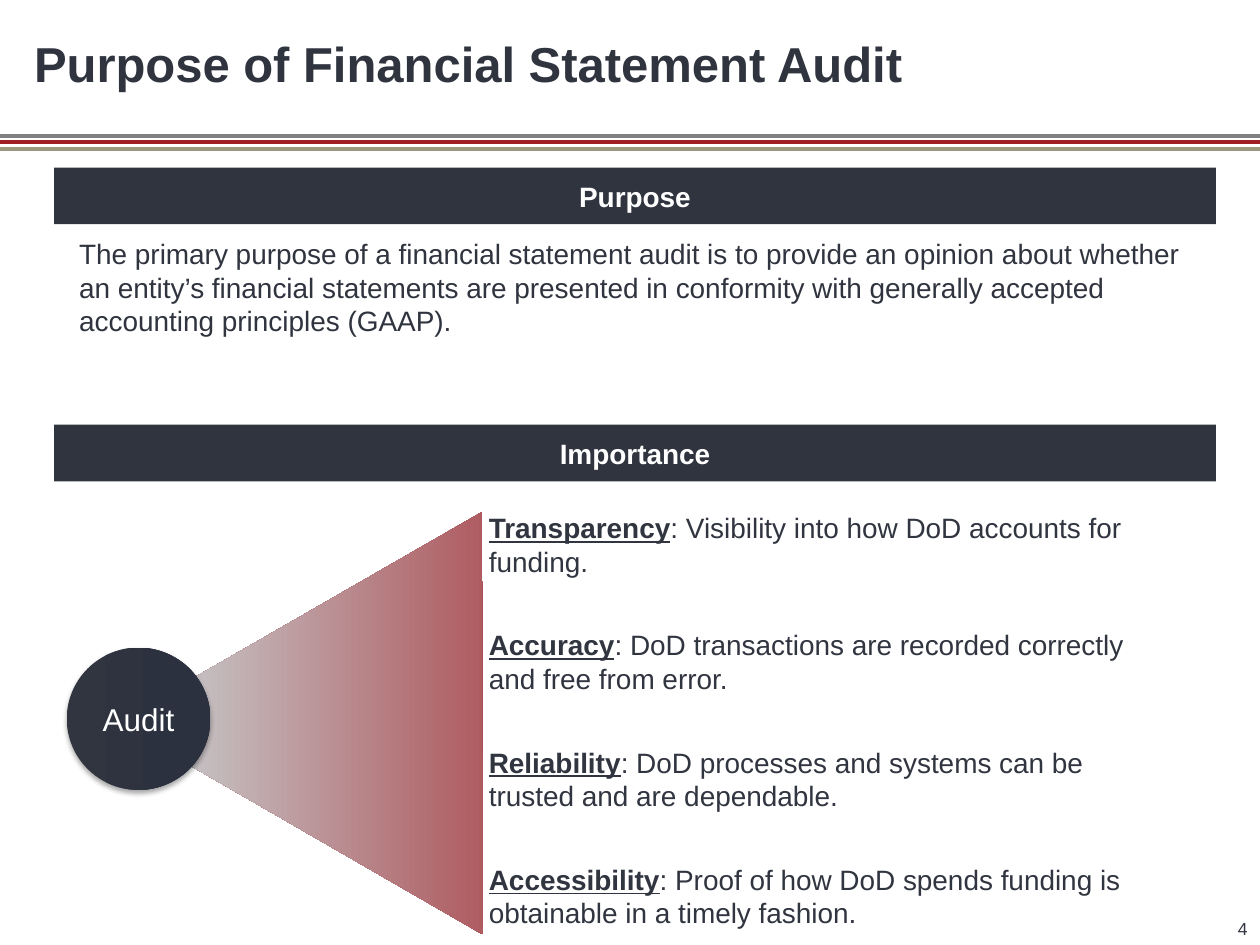
import pptx
import pptx.util
import pptx.enum.shapes
import pptx.enum.text
import pptx.dml.color
import pptx.oxml
import pptx.oxml.ns

Inches, Pt = pptx.util.Inches, pptx.util.Pt
MSO = pptx.enum.shapes.MSO_SHAPE
ALIGN = pptx.enum.text.PP_ALIGN
ANCHOR = pptx.enum.text.MSO_ANCHOR
COLORS = {"navy": "30343F", "ink": "313540", "white": "FFFFFF", "gray": "808080",
          "red": "A11D24", "tan": "9A977C"}
TITLE = "Purpose of Financial Statement Audit"
PURPOSE = ("The primary purpose of a financial statement audit is to provide an opinion about "
           "whether an entity’s financial statements are presented in conformity with generally "
           "accepted accounting principles (GAAP).")
RULES = ["gray", "red", "tan"]
BARS = [("Purpose", 1.33), ("Importance", 3.37)]
BENEFITS = [
    ("Transparency", ": Visibility into how DoD accounts for funding.", 5.26),
    ("Accuracy", ": DoD transactions are recorded correctly and free from error.", 5.26),
    ("Reliability", ": DoD processes and systems can be trusted and are dependable.", 5.26),
    ("Accessibility", ": Proof of how DoD spends funding is obtainable in a timely fashion.", 5.75),
]
BEAM_STOPS = [(0, "A11D24"), (90, "C6C7C9"), (100, "E3E4E4")]
AUDIT_STOPS = [(0, "313540"), (80, "2C313F"), (100, "2C3140")]
NS = pptx.oxml.ns.nsdecls("a")


def rgb(name):
    """Return the named colour."""
    return pptx.dml.color.RGBColor.from_string(COLORS[name])


def write(shape, runs, size, color, align=ALIGN.LEFT, anchor=ANCHOR.MIDDLE, inset=(0.1, 0.05)):
    """Write one paragraph of (text, font values) runs into a shape."""
    tf = shape.text_frame
    x, y = map(Inches, inset)
    frame = {"word_wrap": True, "vertical_anchor": anchor, "margin_left": x,
             "margin_right": x, "margin_top": y, "margin_bottom": y}
    for key, value in frame.items():
        setattr(tf, key, value)
    p = tf.paragraphs[0]
    p.alignment = align
    for text, style in runs:
        r = p.add_run()
        r.text = text
        for key, value in {"name": "Arial", "size": Pt(size), **style}.items():
            setattr(r.font, key, value)
        r.font.color.rgb = rgb(color)


def add_shape(s, kind, box, fill=None):
    """Add a borderless preset shape without a shadow."""
    sp = s.shapes.add_shape(kind, *map(Inches, box))
    sp.shadow.inherit = False
    sp.line.fill.background()
    if fill:
        sp.fill.solid()
        sp.fill.fore_color.rgb = rgb(fill)
    else:
        sp.fill.background()
    return sp


def set_gradient(sp, stops, angle):
    """Replace the fill of a shape with a linear gradient."""
    gs = "".join(f'<a:gs pos="{pos * 1000}"><a:srgbClr val="{color}"/></a:gs>'
                 for pos, color in stops)
    grad = pptx.oxml.parse_xml(f'<a:gradFill {NS} rotWithShape="1"><a:gsLst>{gs}</a:gsLst>'
                               f'<a:lin ang="{angle * 60000}" scaled="0"/></a:gradFill>')
    spPr = sp._element.spPr
    spPr.replace(spPr.find(pptx.oxml.ns.qn("a:noFill")), grad)


def add_shadow(sp):
    """Give a shape a soft shadow below it."""
    effects = sp._element.spPr.find(pptx.oxml.ns.qn("a:effectLst"))
    effects.append(pptx.oxml.parse_xml(
        f'<a:outerShdw {NS} blurRad="{Pt(3.1)}" dist="{Pt(1.8)}" dir="5400000" rotWithShape="0">'
        '<a:srgbClr val="000000"><a:alpha val="35000"/></a:srgbClr></a:outerShdw>'))


def add_text(s, box, *args, **kwargs):
    """Add a text box with one paragraph."""
    write(s.shapes.add_textbox(*map(Inches, box)), *args, **kwargs)


def main():
    """Build the audit purpose slide."""
    prs = pptx.Presentation()
    prs.slide_width, prs.slide_height = Inches(10), Inches(7.5)
    s = prs.slides.add_slide(prs.slide_layouts[5])

    for i, color in enumerate(RULES):
        y = Inches(1.08 + 0.05 * i)
        rule = s.shapes.add_connector(pptx.enum.shapes.MSO_CONNECTOR.STRAIGHT,
                                      Inches(-0.01), y, Inches(10), y)
        rule.line.color.rgb = rgb(color)
        rule.line.width = Pt(2.25)
        rule._element.spPr.append(pptx.oxml.parse_xml(f"<a:effectLst {NS}/>"))

    title = s.shapes.title
    for key, value in {"left": 0.17, "top": 0, "width": 8.17, "height": 1}.items():
        setattr(title, key, Inches(value))
    write(title, [(TITLE, {"bold": True})], 28, "navy")

    add_text(s, (0.53, 1.83, 9, 0.91), [(PURPOSE, {})], 16, "navy", anchor=ANCHOR.TOP)
    for text, top in BARS:
        bar = add_shape(s, MSO.RECTANGLE, (0.43, top, 9.22, 0.45), "navy")
        write(bar, [(text, {"bold": True})], 16, "white", ALIGN.CENTER, inset=(0.04, 0.04))
    add_text(s, (7.67, 7.1, 2.33, 0.4), [("4", {})], 10, "ink", ALIGN.RIGHT, ANCHOR.BOTTOM)

    for i, (term, meaning, width) in enumerate(BENEFITS):
        sp = add_shape(s, MSO.ROUNDED_RECTANGLE, (3.83, 4.02 + 0.93 * i, width, 0.6))
        sp.adjustments[0] = 0
        runs = [(term, {"bold": True, "underline": True}), (meaning, {"bold": False})]
        write(sp, runs, 16, "ink", inset=(0.05, 0.05))

    beam = add_shape(s, MSO.ISOSCELES_TRIANGLE, (1.42, 3.87, 3.36, 2.9))
    beam.rotation = 30
    set_gradient(beam, BEAM_STOPS, 150)
    audit = add_shape(s, MSO.OVAL, (0.53, 5.14, 1.14, 1.13))
    set_gradient(audit, AUDIT_STOPS, 0)
    add_shadow(audit)
    write(audit, [("Audit", {})], 18, "white", ALIGN.CENTER, inset=(0.05, 0.05))
    prs.save("out.pptx")


if __name__ == "__main__":
    main()
